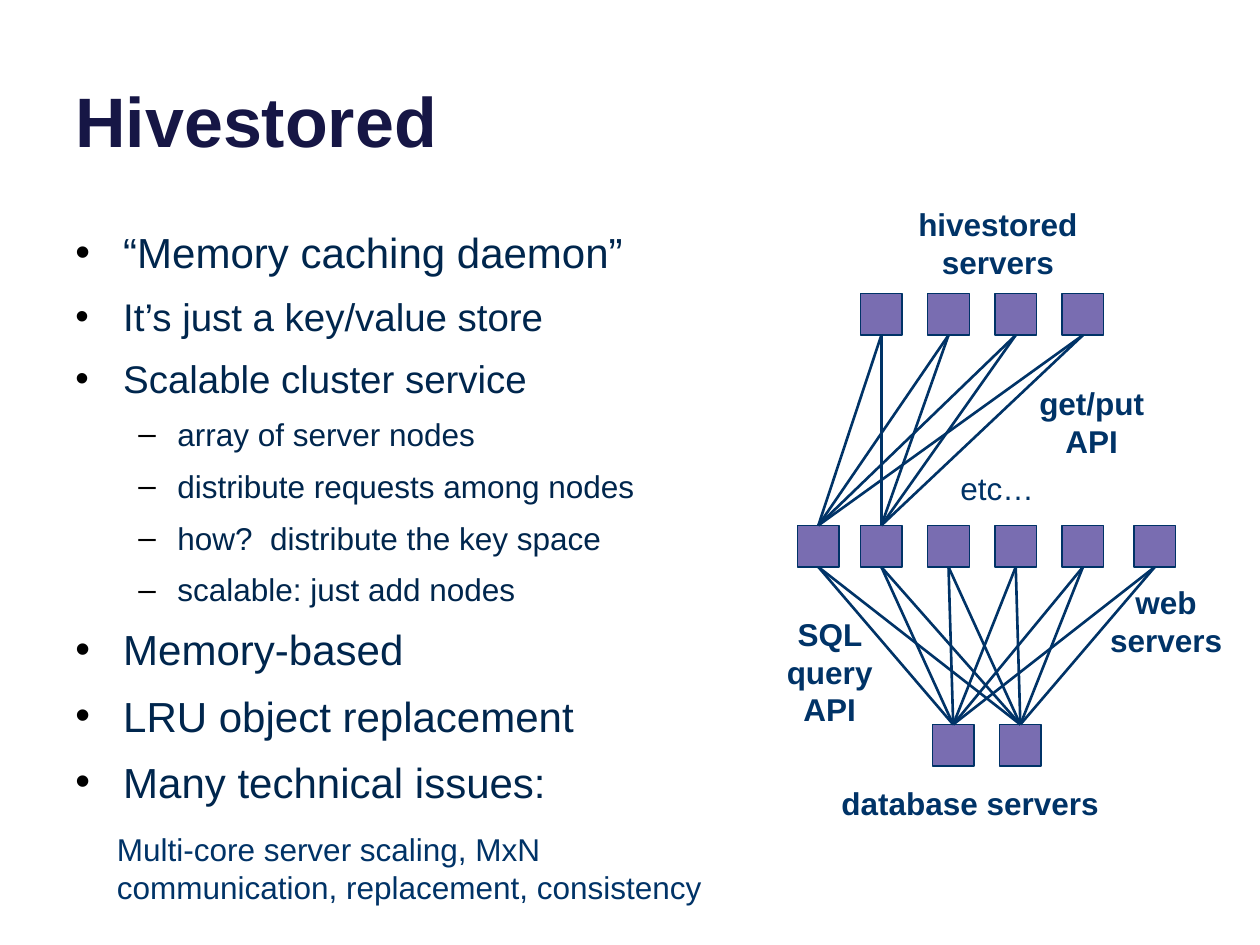
from pptx import Presentation
from pptx.util import Inches, Pt
from pptx.dml.color import RGBColor
from pptx.enum.shapes import MSO_SHAPE as SHAPE, MSO_CONNECTOR as CONNECTOR
from pptx.enum.text import PP_ALIGN as ALIGN, MSO_ANCHOR as ANCHOR, MSO_AUTO_SIZE as AUTO
from pptx.oxml.ns import qn
from lxml.etree import SubElement

FONT = "Arial"
NAVY, INK, TITLE, PURPLE = "003367", "00264D", "161645", "796DB1"
NODE, PITCH = 0.33, 1.6 / 3
BULLETS = [
    (0, 24, "“Memory caching daemon”"),
    (0, 22, "It’s just a key/value store"),
    (0, 22, "Scalable cluster service"),
    (1, 18, "array of server nodes"),
    (1, 18, "distribute requests among nodes"),
    (1, 18, "how?  distribute the key space"),
    (1, 18, "scalable: just add nodes"),
    (0, 24, "Memory-based"),
    (0, 24, "LRU object replacement"),
    (0, 24, "Many technical issues:"),
]
LEVELS = [("•", 0.38, 0.38, 9), ("–", 0.81, 0.31, 8)]


def color(value):
    """Turn a hex string into a colour."""
    return RGBColor.from_string(value)


def add_run(p, text, size, ink, bold=False):
    """Append one formatted run to a paragraph."""
    r = p.add_run()
    r.text = text
    r.font.name, r.font.size, r.font.bold = FONT, Pt(size), bold
    r.font.color.rgb = color(ink)


def add_box(s, x, y, w, h):
    """Add an empty wrapping text box and return its text frame."""
    tf = s.shapes.add_textbox(Inches(x), Inches(y), Inches(w), Inches(h)).text_frame
    tf.word_wrap = True
    return tf


def add_label(s, x, y, w, h, lines, bold=True, align=ALIGN.CENTER):
    """Add an 18 point label with one paragraph per line."""
    tf = add_box(s, x, y, w, h)
    tf.auto_size = AUTO.SHAPE_TO_FIT_TEXT
    for i, line in enumerate(lines):
        p = tf.add_paragraph() if i else tf.paragraphs[0]
        p.alignment = align
        add_run(p, line, 18, NAVY, bold)


def add_title(s, x, y, w, h):
    """Place the slide title at the bottom of its box."""
    tf = add_box(s, x, y, w, h)
    tf.vertical_anchor = ANCHOR.BOTTOM
    add_run(tf.paragraphs[0], "Hivestored", 40, TITLE, True)


def add_bullets(s, x, y, w, h):
    """Place the two-level bullet list."""
    tf = add_box(s, x, y, w, h)
    for i, (level, size, text) in enumerate(BULLETS):
        mark, left, hang, before = LEVELS[level]
        p = tf.add_paragraph() if i else tf.paragraphs[0]
        p.level, p.space_before = level, Pt(before)
        pPr = p._p.get_or_add_pPr()
        pPr.set("marL", str(Inches(left)))
        pPr.set("indent", str(-Inches(hang)))
        SubElement(SubElement(pPr, qn("a:buClr")), qn("a:srgbClr"), val="000000")
        SubElement(pPr, qn("a:buFont"), typeface=FONT)
        SubElement(pPr, qn("a:buChar"), char=mark)
        add_run(p, text, size, INK)


def add_node(s, x, y):
    """Add one square server node."""
    sp = s.shapes.add_shape(SHAPE.RECTANGLE, Inches(x), Inches(y), Inches(NODE), Inches(NODE))
    sp.shadow.inherit = False
    sp.fill.solid()
    sp.fill.fore_color.rgb = color(PURPLE)
    sp.line.color.rgb = color(NAVY)
    sp.line.width = Pt(0.75)
    return sp


def link_all(s, uppers, lowers):
    """Join every upper node's bottom to every lower node's top."""
    for upper in uppers:
        for lower in lowers:
            c = s.shapes.add_connector(CONNECTOR.STRAIGHT, 0, 0, 0, 0)
            c.begin_connect(upper, 2)
            c.end_connect(lower, 0)
            c.line.color.rgb = color(NAVY)
            c.line.width = Pt(1.5)
            SubElement(c._element.spPr, qn("a:effectLst"))


def add_cluster(s, x, y):
    """Draw the three server tiers, their links and their labels."""
    columns = [x + 0.83 + i * PITCH for i in range(4)]
    cache = [add_node(s, cx, y + 0.75) for cx in columns]
    web = [add_node(s, cx, y + 2.59) for cx in [x + 0.33, *columns, x + 3]]
    database = [add_node(s, x + 1.4 + i * PITCH, y + 4.17) for i in range(2)]
    link_all(s, cache, web[:2])
    link_all(s, web, database)
    add_label(s, x + 0.92, y, 2, 0.71, ["hivestored servers"])
    add_label(s, x + 2.08, y + 1.42, 1.17, 0.71, ["get/put API"])
    add_label(s, x + 1.33, y + 2.09, 1.17, 0.4, ["etc…"], bold=False)
    add_label(s, x + 2.67, y + 3, 1.17, 0.71, ["web", "servers"])
    add_label(s, x, y + 3.25, 1.17, 1.01, ["SQL query API"])
    add_label(s, x + 0.58, y + 4.59, 2.67, 0.4, ["database servers"], align=ALIGN.LEFT)


def main():
    """Build and save the slide."""
    prs = Presentation()
    prs.slide_width, prs.slide_height = Inches(10), Inches(7.5)
    s = prs.slides.add_slide(prs.slide_layouts[6])
    add_title(s, 0.5, -0.37, 9, 1.7)
    add_bullets(s, 0.5, 1.75, 9, 4.5)
    add_cluster(s, 6, 1.58)
    add_label(s, 0.83, 6.54, 5, 0.71,
              ["Multi-core server scaling, MxN communication, replacement, consistency"],
              bold=False, align=ALIGN.LEFT)
    prs.save("out.pptx")


if __name__ == "__main__":
    main()
